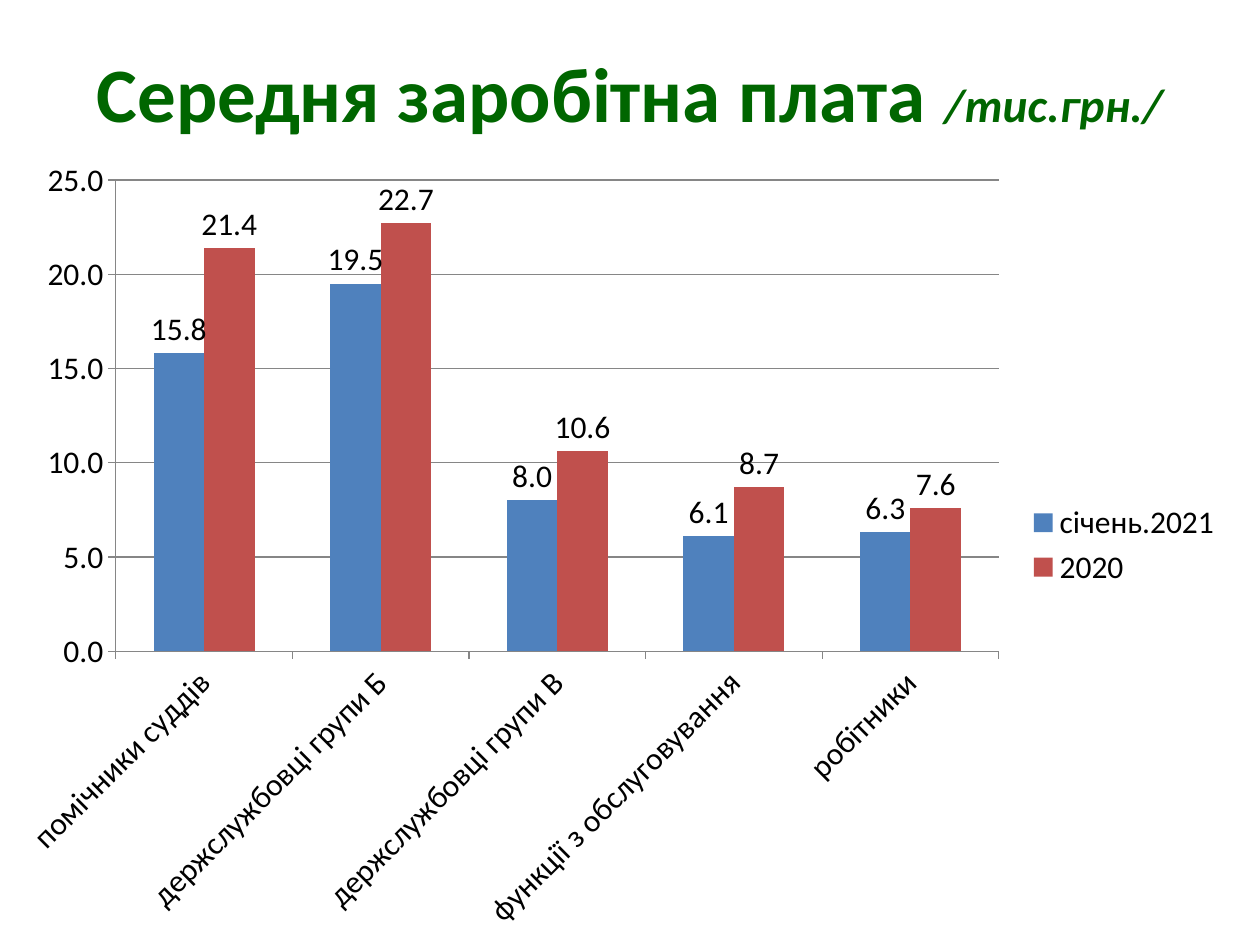
from pptx import Presentation
from pptx.chart.data import CategoryChartData
from pptx.dml.color import RGBColor
from pptx.enum.chart import XL_CHART_TYPE, XL_LABEL_POSITION, XL_LEGEND_POSITION, XL_TICK_MARK
from pptx.enum.text import MSO_ANCHOR, PP_ALIGN
from pptx.util import Pt

COLUMNS = XL_CHART_TYPE.COLUMN_CLUSTERED
OUTSIDE_END = XL_LABEL_POSITION.OUTSIDE_END
RIGHT = XL_LEGEND_POSITION.RIGHT
TICK_OUT = XL_TICK_MARK.OUTSIDE
MIDDLE = MSO_ANCHOR.MIDDLE
CENTER = PP_ALIGN.CENTER

EMU_PER_PX = 914400 / 126
FONT = "Calibri"
NUMBER_FORMAT = "0.0"
COLORS = {
    "title": "006600",
    "text": "000000",
    "line": "868686",
    "january": "4F81BD",
    "year": "C0504D",
}
CATEGORIES = [
    "помічники суддів",
    "держслужбовці групи Б",
    "держслужбовці групи В",
    "функції з обслуговування",
    "робітники",
]
SERIES = [
    ("січень.2021", "january", (15.8, 19.5, 8, 6.1, 6.3)),
    ("2020", "year", (21.4, 22.7, 10.6, 8.7, 7.6)),
]


def px(*lengths):
    return [round(n * EMU_PER_PX) for n in lengths]


def rgb(name):
    return RGBColor.from_string(COLORS[name])


def add_title(s, box, text, unit):
    """Fill the title placeholder, with the unit smaller and in italics."""
    sp = s.shapes.title
    sp.left, sp.top, sp.width, sp.height = px(*box)
    tf = sp.text_frame
    tf.word_wrap = True
    tf.vertical_anchor = MIDDLE
    p = tf.paragraphs[0]
    p.alignment = CENTER
    p.font.name = FONT
    p.font.bold = True
    p.font.color.rgb = rgb("title")
    for words, size, italic in ((text, 44, False), (unit, 27, True)):
        r = p.add_run()
        r.text = words
        r.font.size = Pt(size)
        r.font.italic = italic


def style_axes(chart):
    for axis in (chart.category_axis, chart.value_axis):
        axis.major_tick_mark = TICK_OUT
        axis.format.line.color.rgb = rgb("line")
    chart.category_axis.tick_labels.font.size = Pt(18)
    body = chart.category_axis._element.txPr.bodyPr
    body.set("rot", str(-45 * 60000))
    body.set("vert", "horz")

    values = chart.value_axis
    values.minimum_scale, values.maximum_scale, values.major_unit = 0, 25, 5
    values.major_gridlines.format.line.color.rgb = rgb("line")
    values.tick_labels.number_format = NUMBER_FORMAT
    values.tick_labels.number_format_is_linked = False


def style_series(series, color):
    series.format.fill.solid()
    series.format.fill.fore_color.rgb = rgb(color)
    labels = series.data_labels
    labels.show_value = True
    labels.position = OUTSIDE_END
    labels.number_format = NUMBER_FORMAT
    labels.number_format_is_linked = False


def add_salary_chart(s, box):
    data = CategoryChartData(number_format=NUMBER_FORMAT)
    data.categories = CATEGORIES
    for name, _, values in SERIES:
        data.add_series(name, values)
    chart = s.shapes.add_chart(COLUMNS, *px(*box), data).chart
    chart.has_title = False
    chart.font.name = FONT
    chart.font.size = Pt(18)
    chart.font.color.rgb = rgb("text")
    chart.has_legend = True
    chart.legend.position = RIGHT
    chart.legend.include_in_layout = False
    style_axes(chart)

    plot = chart.plots[0]
    plot.gap_width = 150
    plot.overlap = 0
    plot.vary_by_categories = False
    for series, (_, color, _) in zip(plot.series, SERIES):
        style_series(series, color)


def main():
    prs = Presentation()
    prs.slide_width, prs.slide_height = px(1260, 945)
    s = prs.slides.add_slide(prs.slide_layouts.get_by_name("Title Only"))
    add_title(s, (63, 38, 1134, 107), "Середня заробітна плата ", "/тис.грн./")
    add_salary_chart(s, (0, 145, 1235, 800))
    prs.save("out.pptx")


if __name__ == "__main__":
    main()
